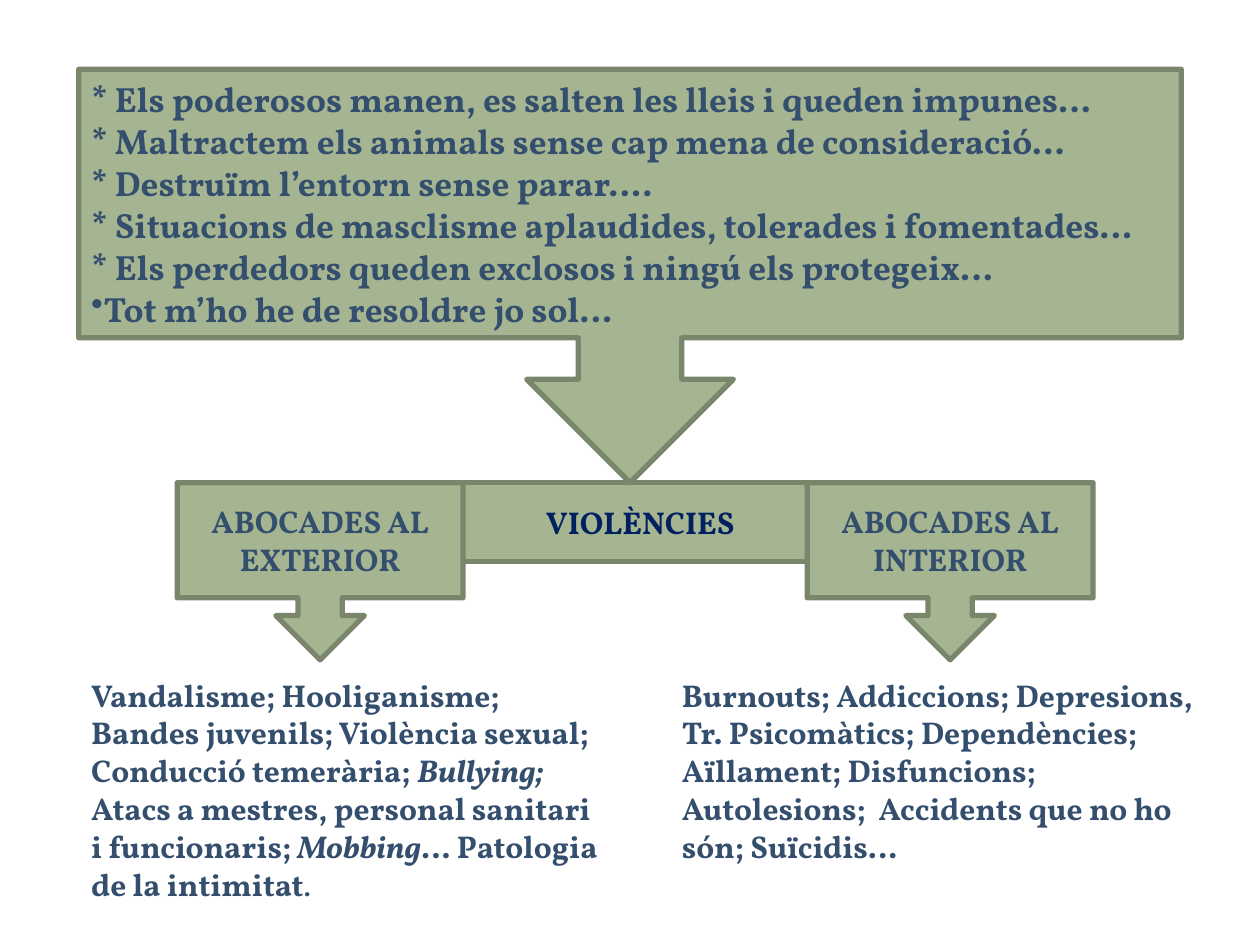
from dataclasses import dataclass

import lxml.etree
import pptx
import pptx.dml.color
import pptx.enum.shapes
import pptx.enum.text
import pptx.oxml.ns
import pptx.util

GRID = 0.625
COLOURS = {"sage": "A5B592", "edge": "7A866C", "slate": "344E6D", "navy": "002060"}
SHAPE = pptx.enum.shapes.MSO_SHAPE
ALIGN = pptx.enum.text.PP_ALIGN


@dataclass(frozen=True)
class Area:
    col: float
    row: float
    cols: float
    rows: float

    def lengths(self) -> list:
        return [pptx.util.Inches(n * GRID) for n in (self.col, self.row, self.cols, self.rows)]


@dataclass(frozen=True)
class Run:
    text: str
    bold: bool = True
    italic: bool = False


@dataclass(frozen=True)
class Branch:
    title: str
    callout_col: float
    examples: Area
    paragraphs: list


def colour(name: str) -> pptx.dml.color.RGBColor:
    return pptx.dml.color.RGBColor.from_string(COLOURS[name])


def write(frame, paragraphs: list, *, size: int = 18, ink: str = "slate",
          align=ALIGN.LEFT, anchor=pptx.enum.text.MSO_ANCHOR.MIDDLE) -> None:
    frame.word_wrap = True
    frame.vertical_anchor = anchor
    for index, runs in enumerate(paragraphs):
        paragraph = frame.add_paragraph() if index else frame.paragraphs[0]
        paragraph.alignment = align
        for part in runs:
            run = paragraph.add_run()
            run.text = part.text
            run.font.name = "Vollkorn"
            run.font.size = pptx.util.Pt(size)
            run.font.bold = part.bold
            run.font.italic = part.italic
            run.font.color.rgb = colour(ink)


def add_block(slide, kind, area: Area, paragraphs: list, **text_format):
    block = slide.shapes.add_shape(kind, *area.lengths())
    block.shadow.inherit = False
    block.fill.solid()
    block.fill.fore_color.rgb = colour("sage")
    block.line.color.rgb = colour("edge")
    block.line.width = pptx.util.Pt(3)
    write(block.text_frame, paragraphs, **text_format)
    return block


def add_examples(slide, area: Area, paragraphs: list) -> None:
    frame = slide.shapes.add_textbox(*area.lengths()).text_frame
    write(frame, paragraphs, anchor=pptx.enum.text.MSO_ANCHOR.TOP)
    frame.auto_size = pptx.enum.text.MSO_AUTO_SIZE.SHAPE_TO_FIT_TEXT


def add_bullet(paragraph) -> None:
    properties = paragraph._p.get_or_add_pPr()
    bullet = lxml.etree.SubElement(properties, pptx.oxml.ns.qn("a:buChar"))
    bullet.set("char", "•")


CAUSES = [
    "* Els poderosos manen, es salten les lleis i queden impunes…",
    "* Maltractem els animals sense cap mena de consideració…",
    "* Destruïm l’entorn sense parar….",
    "* Situacions de masclisme aplaudides, tolerades i fomentades…",
    "* Els perdedors queden exclosos i ningú els protegeix…",
    "Tot m’ho he de resoldre jo sol…",
]

BRANCHES = [
    Branch("ABOCADES AL EXTERIOR", 2.25, Area(1, 8.5, 6.88, 3.07), [[
        Run("Vandalisme; Hooliganisme; Bandes juvenils; Violència sexual; Conducció temerària; "),
        Run("Bullying; ", italic=True),
        Run("Atacs a mestres, personal sanitari i funcionaris; "),
        Run("Mobbing", italic=True),
        Run("… Patologia de la intimitat"),
        Run(".", bold=False),
    ]]),
    Branch("ABOCADES AL INTERIOR", 10.25, Area(8.5, 8.5, 7.12, 3.07), [
        [Run("Burnouts; Addiccions; Depresions,")],
        [Run("Tr. Psicomàtics; Dependències; Aïllament; Disfuncions; "
             "Autolesions;  Accidents que no ho són; Suïcidis…")],
    ]),
]


def main() -> None:
    deck = pptx.Presentation()
    deck.slide_width = pptx.util.Inches(16 * GRID)
    deck.slide_height = pptx.util.Inches(12 * GRID)
    slide = deck.slides.add_slide(deck.slide_layouts[6])

    add_block(slide, SHAPE.RECTANGLE, Area(5.38, 6.13, 5.5, 1),
              [[Run("VIOLÈNCIES")]], ink="navy", align=ALIGN.CENTER)
    for branch in BRANCHES:
        add_block(slide, SHAPE.DOWN_ARROW_CALLOUT, Area(branch.callout_col, 6.13, 3.63, 2.25),
                  [[Run(branch.title)]], align=ALIGN.CENTER)
        add_examples(slide, branch.examples, branch.paragraphs)
    causes = add_block(slide, SHAPE.DOWN_ARROW_CALLOUT, Area(1, 0.88, 14, 5.25),
                       [[Run(cause)] for cause in CAUSES], size=20)
    add_bullet(causes.text_frame.paragraphs[-1])

    deck.save("out.pptx")


if __name__ == "__main__":
    main()
